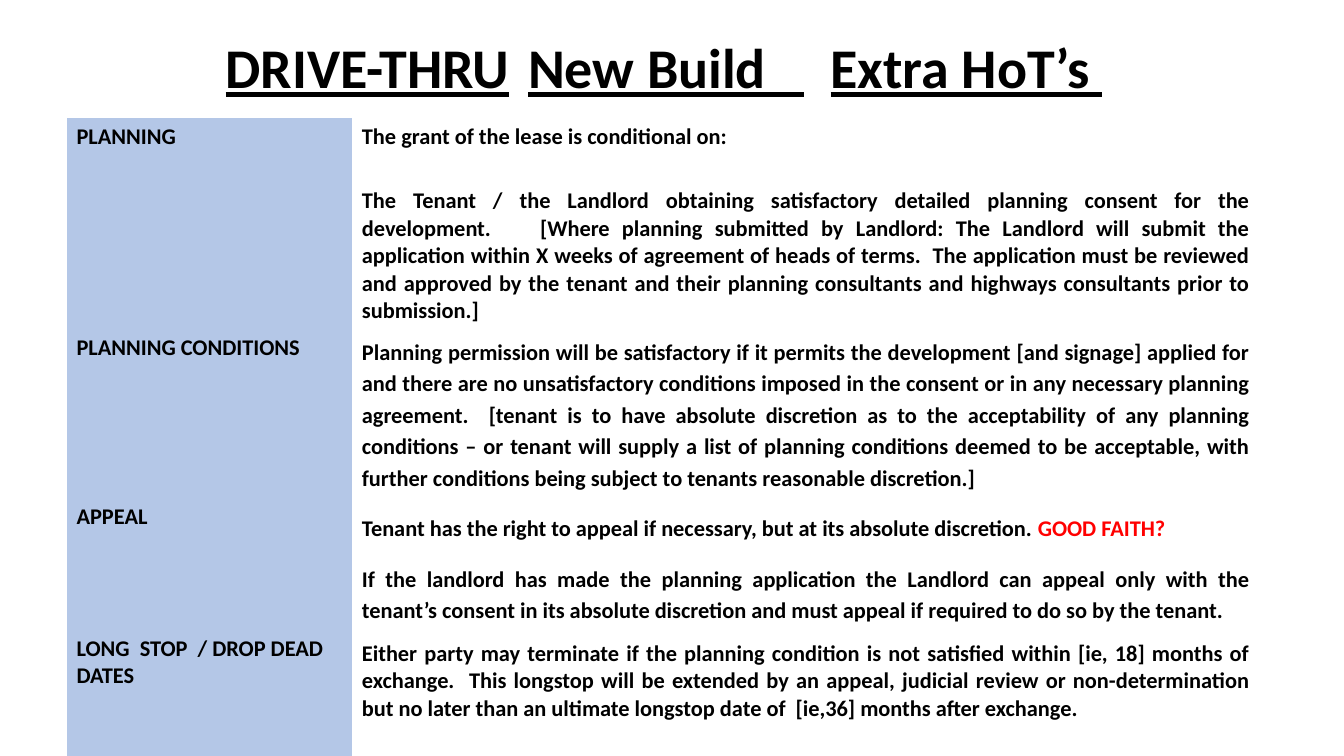
from dataclasses import dataclass

from pptx import Presentation
from pptx.dml.color import RGBColor
from pptx.enum import text as t
from pptx.oxml import ns
from pptx.util import Inches, Pt

HUES = {"ink": "000000", "alert": "FF0000", "label": "B4C7E7"}
PLAIN = "{2D5ABB26-0587-4C30-8999-92F81FD0307C}"
LEFT, MID, JUST = t.PP_ALIGN.LEFT, t.PP_ALIGN.CENTER, t.PP_ALIGN.JUSTIFY
TOP, CENTRE = t.MSO_ANCHOR.TOP, t.MSO_ANCHOR.MIDDLE


@dataclass
class Term:
    label: str
    body: str
    height: float
    alert: str = ""
    lead: float = 1.0
    anchor: t.MSO_ANCHOR = CENTRE
    inset: float = 0.05


TERMS = [
    Term("PLANNING", "The grant of the lease is conditional on:", 0.64, anchor=TOP),
    Term(
        "",
        "The Tenant / the Landlord obtaining satisfactory detailed planning consent "
        "for the development.    [Where planning submitted by Landlord: The Landlord "
        "will submit the application within X weeks of agreement of heads of terms.  "
        "The application must be reviewed and approved by the tenant and their planning "
        "consultants and highways consultants prior to submission.]",
        1.46,
    ),
    Term(
        "PLANNING CONDITIONS",
        "Planning permission will be satisfactory if it permits the development [and "
        "signage] applied for and there are no unsatisfactory conditions imposed in the "
        "consent or in any necessary planning agreement.  [tenant is to have absolute "
        "discretion as to the acceptability of any planning conditions – or tenant will "
        "supply a list of planning conditions deemed to be acceptable, with further "
        "conditions being subject to tenants reasonable discretion.]",
        1.67,
        lead=1.15,
    ),
    Term(
        "APPEAL",
        "Tenant has the right to appeal if necessary, but at its absolute discretion. ",
        0.58,
        alert="GOOD FAITH?",
        lead=1.15,
    ),
    Term(
        "",
        "If the landlord has made the planning application the Landlord can appeal only "
        "with the tenant’s consent in its absolute discretion and must appeal if required "
        "to do so by the tenant.",
        0.73,
        lead=1.15,
    ),
    Term(
        "LONG  STOP  / DROP DEAD DATES",
        "Either party may terminate if the planning condition is not satisfied within "
        "[ie, 18] months of exchange.  This longstop will be extended by an appeal, "
        "judicial review or non-determination but no later than an ultimate longstop "
        "date of  [ie,36] months after exchange.",
        1.27,
        anchor=TOP,
        inset=0.1,
    ),
]


def write(para, words: str, size: float, hue: str = "ink", line: bool = False) -> None:
    """Add one bold run to a paragraph."""
    run = para.add_run()
    run.text = words
    look = {"name": "Calibri", "size": Pt(size), "bold": True, "underline": line}
    for key, value in look.items():
        setattr(run.font, key, value)
    run.font.color.rgb = RGBColor.from_string(HUES[hue])


def align(para, side: t.PP_ALIGN, lead: float) -> None:
    for key, value in {"alignment": side, "line_spacing": lead}.items():
        setattr(para, key, value)


def add_title(slide) -> None:
    box = slide.shapes.add_textbox(Inches(1.55), Inches(0.23), Inches(10.07), Inches(0.94))
    frame = box.text_frame
    frame.word_wrap = True
    frame.vertical_anchor = CENTRE
    para = frame.paragraphs[0]
    align(para, MID, 0.9)
    write(para, "DRIVE-THRU\tNew Build   \tExtra HoT’s ", 40, line=True)


def fill_row(row, term: Term) -> None:
    row.height = Inches(term.height)
    label, body = row.cells
    label.fill.solid()
    label.fill.fore_color.rgb = RGBColor.from_string(HUES["label"])
    body.fill.background()
    if term.label:
        para = label.text_frame.paragraphs[0]
        align(para, LEFT, 1.0)
        write(para, term.label, 16)
    body.vertical_anchor = term.anchor
    body.margin_top = Inches(term.inset)
    para = body.text_frame.paragraphs[0]
    align(para, JUST, term.lead)
    write(para, term.body, 16)
    if term.alert:
        write(para, term.alert, 16, "alert")


def add_terms(slide) -> None:
    high = sum(term.height for term in TERMS)
    frame = slide.shapes.add_table(
        len(TERMS), 2, Inches(0.66), Inches(1.17), Inches(11.84), Inches(high)
    )
    for mark in frame.element.iter(ns.qn("a:tableStyleId")):
        mark.text = PLAIN
    table = frame.table
    for flag in ("first_row", "horz_banding"):
        setattr(table, flag, False)
    for col, wide in zip(table.columns, (2.83, 9.01)):
        col.width = Inches(wide)
    for row, term in zip(table.rows, TERMS):
        fill_row(row, term)


def main() -> None:
    deck = Presentation()
    deck.slide_width, deck.slide_height = Inches(13.33), Inches(7.5)
    slide = deck.slides.add_slide(deck.slide_layouts[6])
    add_title(slide)
    add_terms(slide)
    deck.save("out.pptx")


if __name__ == "__main__":
    main()
